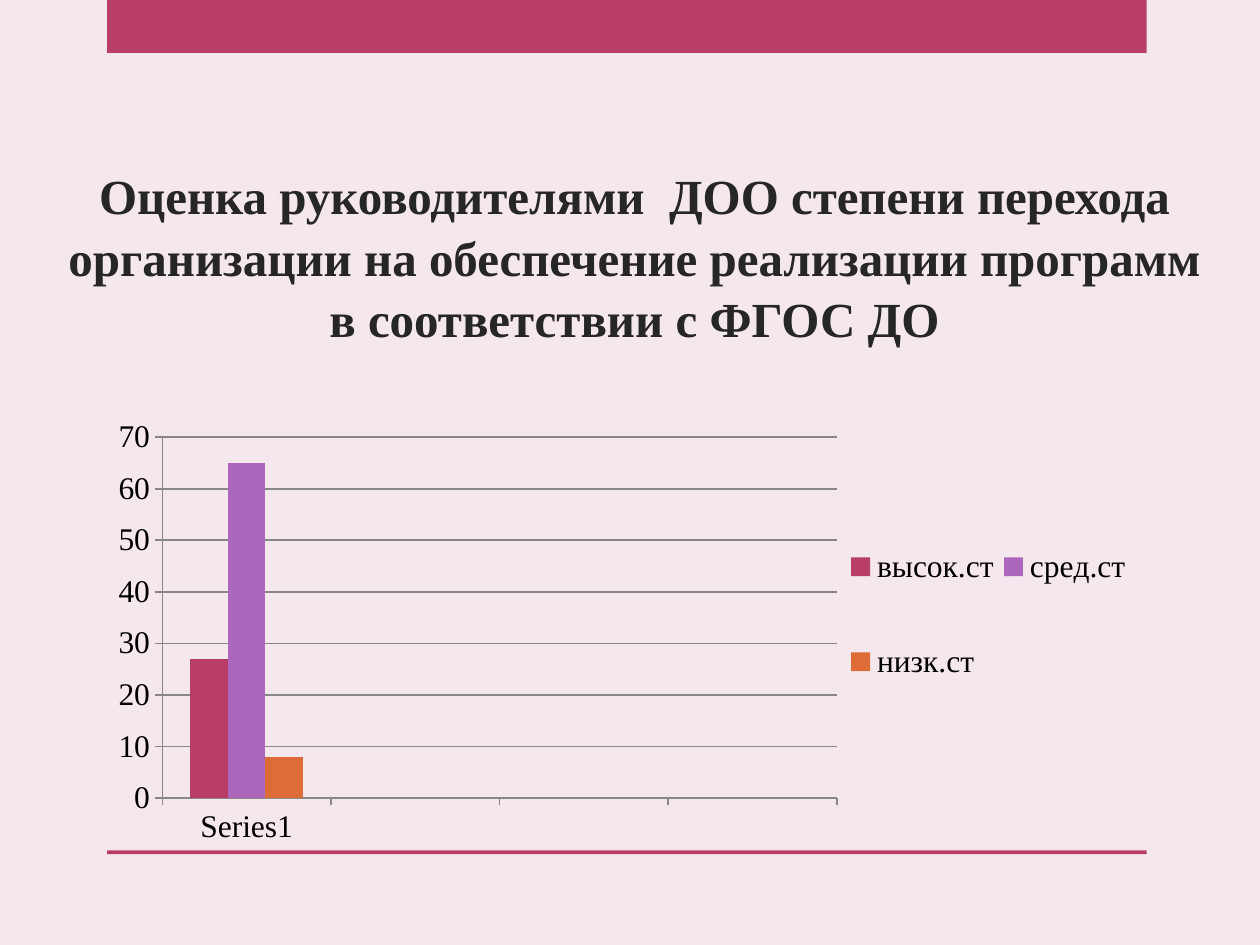
from pptx import Presentation
from pptx.chart.data import CategoryChartData
from pptx.dml.color import RGBColor
from pptx.enum.chart import XL_CHART_TYPE, XL_LEGEND_POSITION, XL_TICK_MARK
from pptx.enum.shapes import MSO_SHAPE
from pptx.enum.text import MSO_ANCHOR, MSO_AUTO_SIZE, PP_ALIGN
from pptx.oxml import parse_xml
from pptx.oxml.ns import nsdecls, qn
from pptx.util import Inches, Pt

INK = {
    "back": "F4E7ED", "rose": "B83D68", "lilac": "AC66BB",
    "amber": "DE6C36", "title": "262626", "text": "000000", "grid": "878787",
}
FONT = "Times New Roman"


def tint(name):
    """Return the named colour."""
    return RGBColor.from_string(INK[name])


def style(font, size, color, bold=False):
    """Format a font."""
    font.name, font.size, font.bold = FONT, Pt(size), bold
    font.color.rgb = tint(color)


def write(frame, text, size=18, color="text", bold=False, align=PP_ALIGN.LEFT, space=1.0):
    """Put formatted text into a frame."""
    para = frame.paragraphs[0]
    para.alignment, para.line_spacing = align, space
    run = para.add_run()
    run.text = text
    style(run.font, size, color, bold)


def place(node, index, box, inner=False):
    """Give a chart part a fixed layout in percent of the chart."""
    old = node.find(qn("c:layout"))
    if old is not None:
        node.remove(old)
    target = '<c:layoutTarget val="inner"/>' if inner else ""
    modes = "".join(f'<c:{axis}Mode val="edge"/>' for axis in "xy")
    sizes = "".join(f'<c:{key} val="{part / 100:.3f}"/>' for key, part in zip("xywh", box))
    node.insert(index, parse_xml(
        f'<c:layout {nsdecls("c")}><c:manualLayout>{target}{modes}{sizes}'
        "</c:manualLayout></c:layout>"))


class Deck:
    """Hold the style and the current slide; boxes are percent of its size."""

    def __init__(self, wide, high):
        """Start a deck with one title-only slide."""
        self.prs = Presentation()
        self.prs.slide_width, self.prs.slide_height = Inches(wide), Inches(high)
        self.slide = self.prs.slides.add_slide(self.prs.slide_layouts[5])
        fill = self.slide.background.fill
        fill.solid()
        fill.fore_color.rgb = tint("back")

    def span(self, box):
        """Turn percents into lengths."""
        full = (self.prs.slide_width, self.prs.slide_height) * 2
        return [round(part * size / 100) for part, size in zip(box, full)]

    def title(self, text, box, **form):
        """Move and fill the title."""
        shape = self.slide.shapes.title
        shape.left, shape.top, shape.width, shape.height = self.span(box)
        frame = shape.text_frame
        frame.word_wrap, frame.auto_size = True, MSO_AUTO_SIZE.NONE
        frame.vertical_anchor = MSO_ANCHOR.BOTTOM
        write(frame, text, **form)

    def bar(self, box, color):
        """Add a plain band."""
        shape = self.slide.shapes.add_shape(MSO_SHAPE.RECTANGLE, *self.span(box))
        shape.shadow.inherit = False
        shape.fill.solid()
        shape.fill.fore_color.rgb = tint(color)
        shape.line.fill.background()

    def chart(self, cats, rows, box, plot, key):
        """Add a column chart with a legend at the right."""
        data = CategoryChartData()
        data.categories = cats
        for name, vals, _ in rows:
            data.add_series(name, vals)
        chart = self.slide.shapes.add_chart(
            XL_CHART_TYPE.COLUMN_CLUSTERED, *self.span(box), data).chart
        style(chart.font, 18, "text")
        chart.has_title = False
        chart.has_legend = True
        chart.legend.position = XL_LEGEND_POSITION.RIGHT
        chart.legend.include_in_layout = False
        columns = chart.plots[0]
        columns.gap_width, columns.overlap = 150, 0
        columns.vary_by_categories = False
        for item, (_, _, color) in zip(columns.series, rows):
            item.format.fill.solid()
            item.format.fill.fore_color.rgb = tint(color)
        scale = chart.value_axis
        scale.minimum_scale, scale.maximum_scale, scale.major_unit = 0, 70, 10
        scale.has_major_gridlines = True
        for axis in (scale, chart.category_axis):
            axis.major_tick_mark = XL_TICK_MARK.OUTSIDE
            axis.minor_tick_mark = XL_TICK_MARK.NONE
        for part in (scale, chart.category_axis, scale.major_gridlines):
            part.format.line.color.rgb = tint("grid")
            part.format.line.width = Pt(1)
        root = chart.element
        place(root.find(".//" + qn("c:plotArea")), 0, plot, inner=True)
        place(root.find(".//" + qn("c:legend")), 1, key)


def main():
    """Build the slide."""
    deck = Deck(10, 7.5)
    for top, high in ((0, 5.6), (90, 0.4)):
        deck.bar((8.5, top, 82.5, high), "rose")
    deck.title(
        "Оценка руководителями  ДОО степени перехода организации на обеспечение "
        "реализации программ в соответствии с ФГОС ДО",
        (3.5, 9.07, 93.7, 28.4), size=28, color="title", bold=True,
        align=PP_ALIGN.CENTER, space=1.05)
    rows = [
        (name, (value, None, None, None), color)
        for name, value, color in (
            ("высок.ст", 27, "rose"), ("сред.ст", 65, "lilac"), ("низк.ст", 8, "amber"))
    ]
    deck.chart(("Series1", "", "", ""), rows, (8.3, 41.6, 83.5, 48.27),
               plot=(5.5, 9.7, 64.1, 79.1), key=(70, 21, 28, 55))
    deck.prs.save("out.pptx")


if __name__ == "__main__":
    main()
